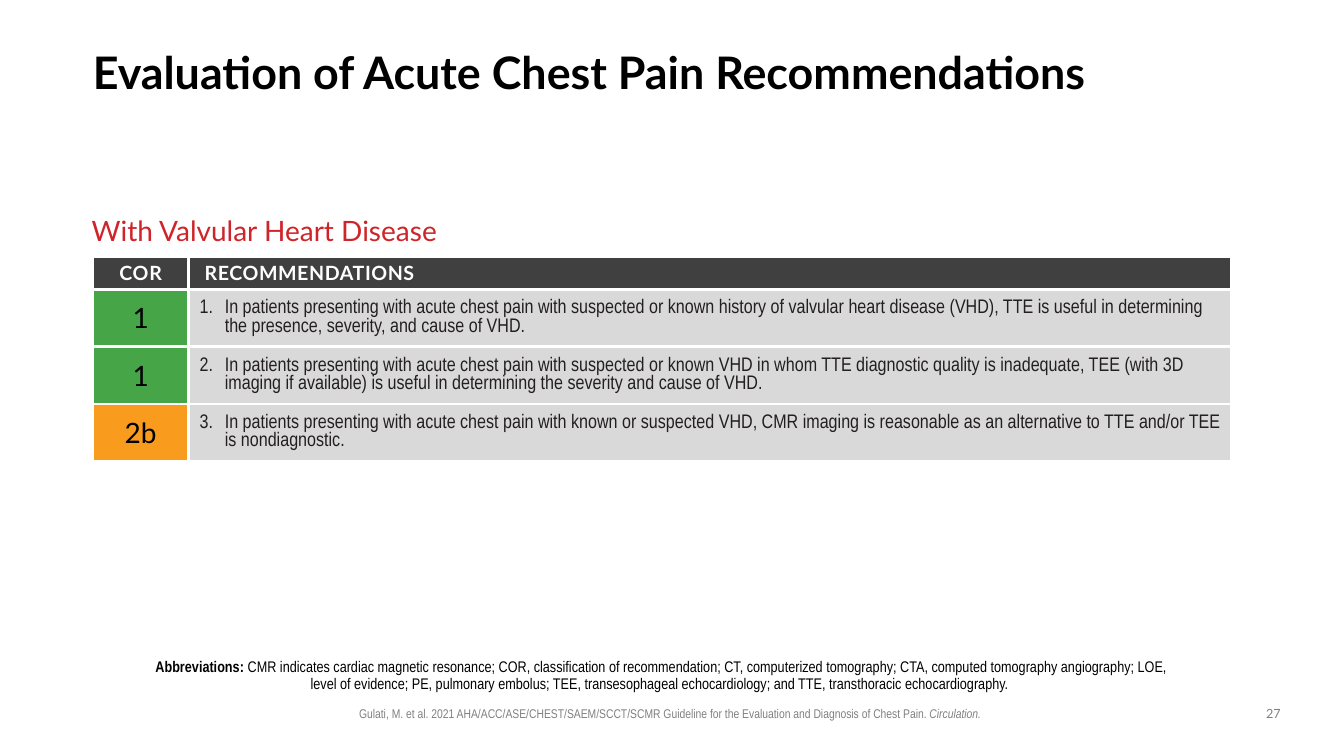
import pptx
import pptx.dml.color
import pptx.enum.text
import pptx.oxml
import pptx.oxml.ns
import pptx.util

Inches = pptx.util.Inches
Pt = pptx.util.Pt
Align = pptx.enum.text.PP_ALIGN
Anchor = pptx.enum.text.MSO_ANCHOR
NS = pptx.oxml.ns.nsdecls("a")


def color(code):
    return pptx.dml.color.RGBColor.from_string(code)


class Page:
    HEAD = "Lato"
    BODY = "Arial Narrow"
    BLACK = "000000"
    GRAY = "808080"
    WHITE = "FFFFFF"

    def __init__(self, deck):
        self.slide = deck.slides.add_slide(deck.slide_layouts[6])

    def run(self, para, text, font, size, ink, bold=False, italic=False, space=0):
        """Add one run; space is letter spacing in points."""
        run = para.add_run()
        run.text = text
        run.font.name = font
        run.font.size = Pt(size)
        run.font.color.rgb = color(ink)
        run.font.bold = bold
        run.font.italic = italic
        if space:
            run.font._element.set("spc", str(round(space * 100)))

    def text(self, box, runs, align=Align.LEFT, line=1.0,
             inset=(0.1, 0.05, 0.1, 0.05), anchor=Anchor.TOP):
        frame = self.slide.shapes.add_textbox(*map(Inches, box)).text_frame
        frame.word_wrap = True
        frame.vertical_anchor = anchor
        (frame.margin_left, frame.margin_top,
         frame.margin_right, frame.margin_bottom) = map(Inches, inset)
        para = frame.paragraphs[0]
        para.alignment = align
        para.line_spacing = line
        for args, style in runs:
            self.run(para, *args, **style)

    def table(self, box, cols, rows):
        frame = self.slide.shapes.add_table(len(rows), len(cols), *map(Inches, box))
        grid = frame.table
        grid.first_row = grid.horz_banding = False
        for col, width in zip(grid.columns, cols):
            col.width = Inches(width)
        for row, height in zip(grid.rows, rows):
            row.height = Inches(height)
        return grid

    def cell(self, cell, fill, pad, side):
        """Style a cell and return its paragraph."""
        cell.fill.solid()
        cell.fill.fore_color.rgb = color(fill)
        cell.vertical_anchor = Anchor.MIDDLE
        cell.margin_top = cell.margin_bottom = Inches(pad)
        cell.margin_left = cell.margin_right = Inches(side)
        props = cell._tc.get_or_add_tcPr()
        for spot, edge in enumerate(("lnL", "lnR", "lnT", "lnB")):
            props.insert(spot, pptx.oxml.parse_xml(
                f'<a:{edge} {NS} w="{Pt(2.25)}"><a:solidFill>'
                f'<a:srgbClr val="{self.WHITE}"/></a:solidFill></a:{edge}>'))
        return cell.text_frame.paragraphs[0]

    def indent(self, para, left, first=0):
        props = para._p.get_or_add_pPr()
        props.set("marL", str(Inches(left)))
        props.set("indent", str(Inches(first)))
        return props

    def number(self, para, start):
        props = self.indent(para, 0.31, -0.25)
        props.append(pptx.oxml.parse_xml(
            f'<a:buFont {NS} typeface="{self.BODY}"/>'))
        props.append(pptx.oxml.parse_xml(
            f'<a:buAutoNum {NS} type="arabicPeriod" startAt="{start}"/>'))


ADVICE = [
    ("1", "46A547", "In patients presenting with acute chest pain with suspected or known "
     "history of valvular heart disease (VHD), TTE is useful in determining the presence, "
     "severity, and cause of VHD."),
    ("1", "46A547", "In patients presenting with acute chest pain with suspected or known "
     "VHD in whom TTE diagnostic quality is inadequate, TEE (with 3D imaging if available) "
     "is useful in determining the severity and cause of VHD."),
    ("2b", "F99B1D", "In patients presenting with acute chest pain with known or suspected "
     "VHD, CMR imaging is reasonable as an alternative to TTE and/or TEE is nondiagnostic."),
]


def fill_table(page):
    grid = page.table((0.92, 2.55, 11.29, 2.03), (0.95, 10.34),
                      [0.32] + [0.57] * len(ADVICE))
    for col, (label, space) in enumerate((("COR", 0.5), ("RECOMMENDATIONS", 0.4))):
        para = page.cell(grid.cell(0, col), "404040", 0.04, 0.1)
        if col:
            page.indent(para, 0.06)
        else:
            para.alignment = Align.CENTER
        page.run(para, label, page.HEAD, 14, page.WHITE, bold=True, space=space)
    for row, (grade, fill, advice) in enumerate(ADVICE, 1):
        para = page.cell(grid.cell(row, 0), fill, 0.05, 0.05)
        para.alignment = Align.CENTER
        page.run(para, grade, page.HEAD, 20, page.BLACK)
        para = page.cell(grid.cell(row, 1), "D9D9D9", 0.05, 0.05)
        page.number(para, row)
        para.line_spacing = Pt(13)
        para.space_after = Pt(6)
        page.run(para, advice, page.BODY, 14, "231F20")


def main():
    deck = pptx.Presentation()
    deck.slide_width = Inches(13.33)
    deck.slide_height = Inches(7.5)
    page = Page(deck)
    small = (page.BODY, 9, page.GRAY)
    note = (page.BODY, 11, page.BLACK)
    page.text((0.92, 0.5, 11.39, 0.49),
              [(("Evaluation of Acute Chest Pain Recommendations",
                 page.HEAD, 32, page.BLACK), {"bold": True})],
              line=0.9, inset=(0, 0, 0, 0), anchor=Anchor.MIDDLE)
    page.text((0.81, 2.11, 5.99, 0.4),
              [(("With Valvular Heart Disease", page.HEAD, 20, "CF2429"), {})], line=0.9)
    fill_table(page)
    page.text((1.4, 6.49, 10.43, 0.51), [
        (("Abbreviations: ", *note), {"bold": True}),
        (("CMR indicates cardiac magnetic resonance; COR, classification of "
          "recommendation; CT, computerized tomography; CTA, computed tomography "
          "angiography; LOE, level of evidence; PE, pulmonary embolus; TEE, "
          "transesophageal echocardiology; and TTE, transthoracic echocardiography. ",
          *note), {}),
    ], Align.CENTER, line=0.9, inset=(0, 0.05, 0.1, 0.05))
    page.text((3.17, 6.95, 6.98, 0.25), [
        (("Gulati, M. et al. 2021 AHA/ACC/ASE/CHEST/SAEM/SCCT/SCMR Guideline for the "
          "Evaluation and Diagnosis of Chest Pain. ", *small), {}),
        (("Circulation. ", *small), {"italic": True}),
    ], Align.CENTER)
    page.text((12.42, 6.95, 0.42, 0.26),
              [(("27", page.HEAD, 9, page.GRAY), {})], Align.CENTER)
    deck.save("out.pptx")


if __name__ == "__main__":
    main()
